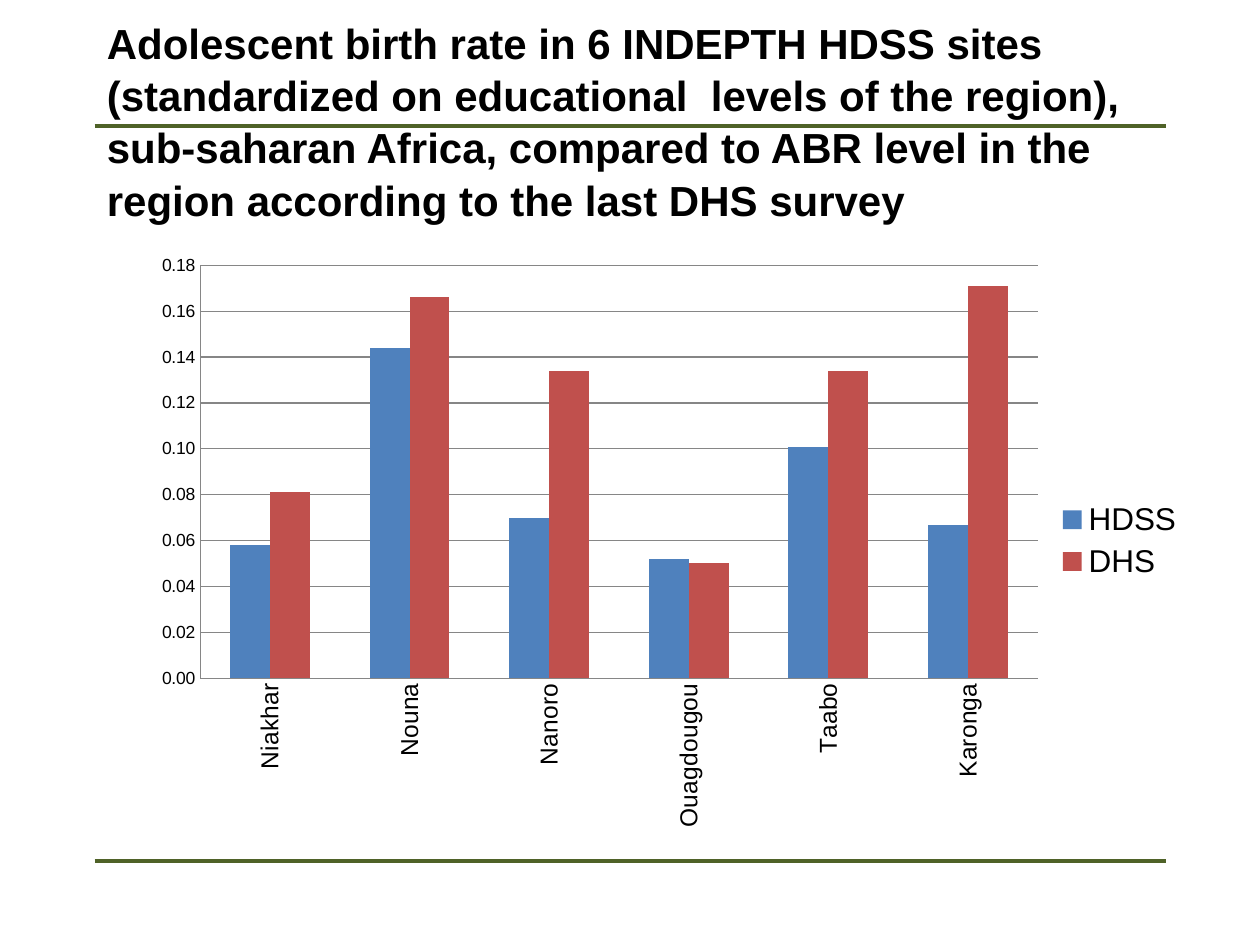
import pptx
import pptx.chart.data
import pptx.dml.color
import pptx.enum.chart
import pptx.enum.text
import pptx.oxml
import pptx.oxml.ns
import pptx.util
from lxml import etree

Pt = pptx.util.Pt
RGB = pptx.dml.color.RGBColor
qn = pptx.oxml.ns.qn

FONT = "Arial"
BLACK = RGB(0x00, 0x00, 0x00)
GREEN = RGB(0x4F, 0x62, 0x28)
BLUE = RGB(0x4F, 0x81, 0xBD)
RED = RGB(0xC0, 0x50, 0x4D)
GRAY = RGB(0x86, 0x86, 0x86)

TITLE = ("Adolescent birth rate in 6 INDEPTH HDSS sites (standardized on "
         "educational  levels of the region), sub-saharan Africa, compared to "
         "ABR level in the region according to the last DHS survey")
SITES = ["Niakhar", "Nouna", "Nanoro", "Ouagdougou", "Taabo", "Karonga"]
RATES = [
    ("HDSS", BLUE, [0.058, 0.144, 0.07, 0.052, 0.101, 0.067]),
    ("DHS", RED, [0.081, 0.166, 0.134, 0.05, 0.134, 0.171]),
]


class Deck:
    def __init__(self, width, height):
        self.prs = pptx.Presentation()
        self.prs.slide_width, self.prs.slide_height = Pt(width), Pt(height)
        self.slide = self.prs.slides.add_slide(self.prs.slide_layouts[6])

    def style(self, font, size, bold=False):
        font.name, font.size, font.bold = FONT, Pt(size), bold
        font.color.rgb = BLACK

    def rule(self, left, right, y):
        line = self.slide.shapes.add_connector(
            pptx.enum.shapes.MSO_CONNECTOR.STRAIGHT,
            Pt(left), Pt(y), Pt(right), Pt(y))
        line.line.color.rgb = GREEN
        line.line.width = Pt(2.25)
        etree.SubElement(line._element.spPr, qn("a:effectLst"))

    def title(self, text, *box):
        frame = self.slide.shapes.add_textbox(*map(Pt, box)).text_frame
        frame.word_wrap = True
        frame.vertical_anchor = pptx.enum.text.MSO_ANCHOR.BOTTOM
        para = frame.paragraphs[0]
        para.text = text
        para.line_spacing = 1.04
        self.style(para.font, 24, True)

    def chart(self, names, rows, *box):
        data = pptx.chart.data.CategoryChartData()
        data.categories = names
        for name, _, vals in rows:
            data.add_series(name, vals)
        chart = self.slide.shapes.add_chart(
            pptx.enum.chart.XL_CHART_TYPE.COLUMN_CLUSTERED,
            *map(Pt, box), data).chart
        self.style(chart.font, 10)
        chart.has_title = False

        # Columns
        plot = chart.plots[0]
        plot.gap_width, plot.overlap = 150, 0
        plot.vary_by_categories = False
        for bars, (_, color, _) in zip(plot.series, rows):
            bars.format.fill.solid()
            bars.format.fill.fore_color.rgb = color

        # Axes
        for axis in (chart.category_axis, chart.value_axis):
            axis.major_tick_mark = pptx.enum.chart.XL_TICK_MARK.NONE
            axis.format.line.color.rgb = GRAY
        cats, scale = chart.category_axis, chart.value_axis
        self.style(cats.tick_labels.font, 14)
        turn = cats._element.find(qn("c:txPr")).find(qn("a:bodyPr"))
        turn.set("rot", "-5400000")
        turn.set("vert", "horz")
        scale.minimum_scale, scale.maximum_scale = 0, 0.18
        scale.major_unit = 0.02
        scale.tick_labels.number_format = "0.00"
        scale.tick_labels.number_format_is_linked = False
        scale.major_gridlines.format.line.color.rgb = GRAY

        # Legend
        chart.has_legend = True
        chart.legend.position = pptx.enum.chart.XL_LEGEND_POSITION.RIGHT
        chart.legend.include_in_layout = False
        self.style(chart.legend.font, 18)
        self.place(chart, x=0.06, y=0.04, w=0.79, h=0.69)

    def place(self, chart, **area):
        """Fix the inner plot area, in fractions of the chart."""
        plot = chart._chartSpace.chart.plotArea
        for old in plot.findall(qn("c:layout")):
            plot.remove(old)
        layout = etree.Element(qn("c:layout"))
        plot.insert(0, layout)
        manual = etree.SubElement(layout, qn("c:manualLayout"))
        parts = {"layoutTarget": "inner", "xMode": "edge", "yMode": "edge"}
        for tag, val in {**parts, **area}.items():
            etree.SubElement(manual, qn("c:" + tag)).set("val", str(val))


def main():
    deck = Deck(720, 540)
    # Rules above and below the content
    for y in (492, 72):
        deck.rule(54, 666, y)
    # Title and chart
    deck.title(TITLE, 54, 54, 612, 78)
    deck.chart(SITES, RATES, 78, 138, 606, 342)
    deck.prs.save("out.pptx")


if __name__ == "__main__":
    main()
